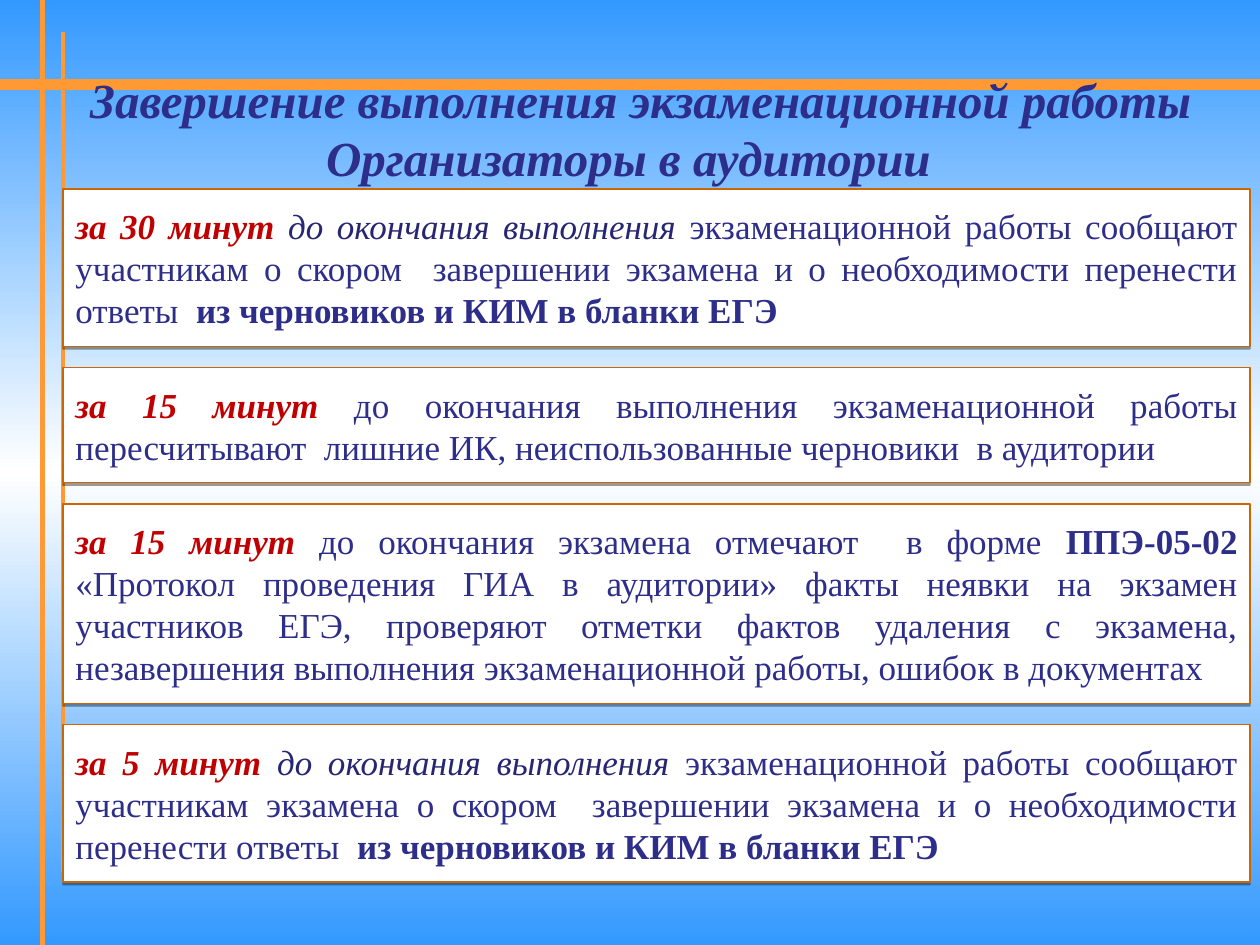
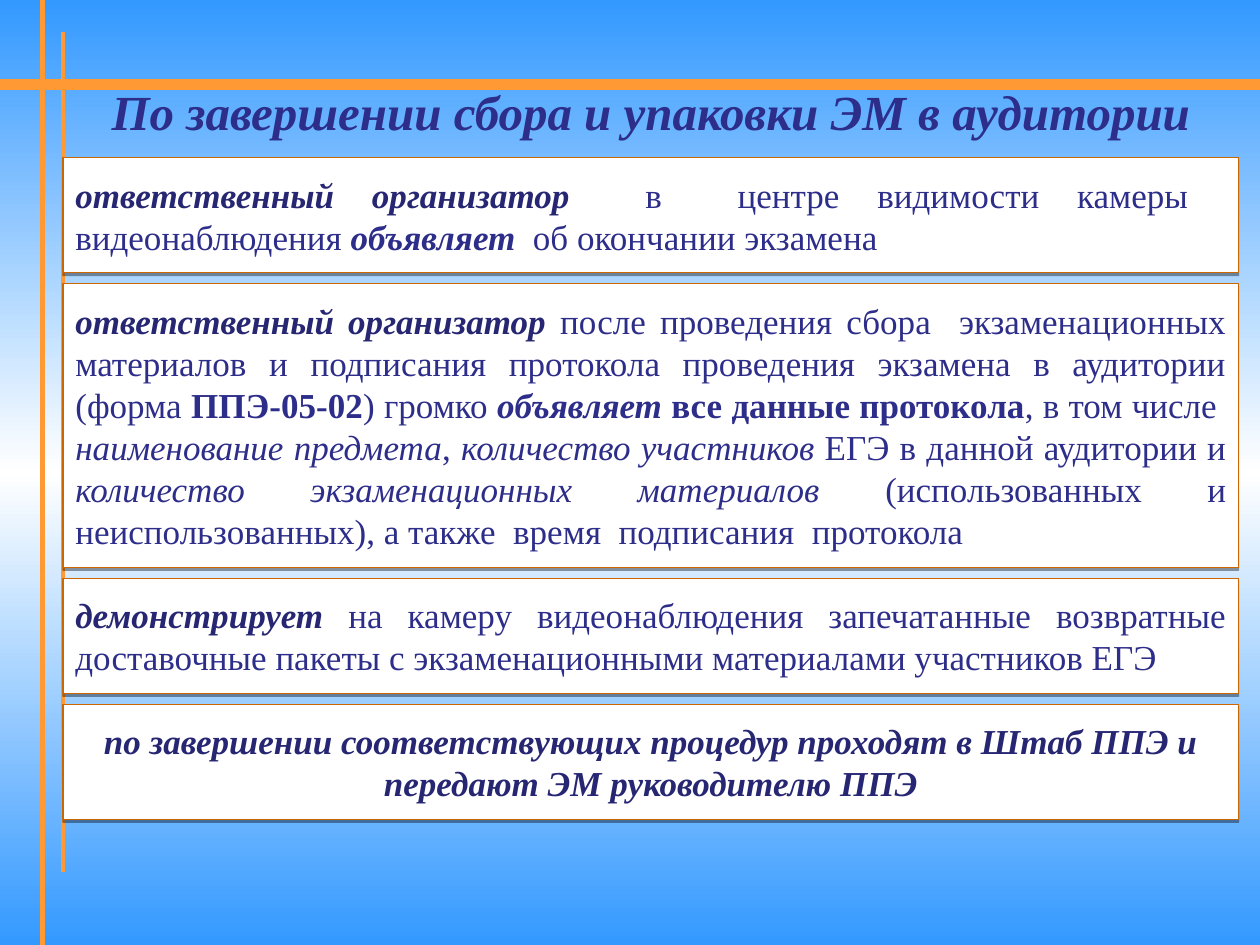
from copy import deepcopy

from lxml import etree
from pptx import Presentation
from pptx.dml.color import RGBColor
from pptx.enum import shapes, text
from pptx.oxml.ns import qn
from pptx.util import Cm, Pt

COLORS = {
    "sky": "3399FF",
    "white": "FFFFFF",
    "orange": "FF9933",
    "frame": "CC6600",
    "blue": "2D2D8A",
    "navy": "262673",
    "red": "C00000",
    "shadow": "000000",
}
FONT = "Times New Roman"
SLIDE_W, SLIDE_H = 25.4, 19.05
LEFT = 1.27
LINE_HEIGHT, PADDING = 0.85, 0.31

# Run styles: colour, bold, italic
STYLES = {
    "time": ("red", True, True),
    "lead": ("navy", True, True),
    "soft": ("navy", False, True),
    "plain": ("blue", False, False),
    "bold": ("blue", True, False),
    "italic": ("blue", False, True),
    "strong": ("blue", True, True),
}

# Each notice: number of text lines, then its runs
BEFORE_END = [
    (3, [("time", "за 30 минут "),
         ("soft", "до окончания выполнения "),
         ("plain", "экзаменационной работы сообщают участникам о скором  "
                   "завершении экзамена и о необходимости перенести ответы  "),
         ("bold", "из черновиков и КИМ в бланки ЕГЭ")]),
    (2, [("time", "за 15 минут "),
         ("plain", "до окончания выполнения экзаменационной работы пересчитывают  "
                   "лишние ИК, неиспользованные черновики  в аудитории")]),
    (4, [("time", "за 15 минут "),
         ("plain", "до окончания экзамена отмечают  в форме "),
         ("bold", "ППЭ-05-02 "),
         ("plain", "«Протокол проведения ГИА в аудитории» факты неявки на экзамен "
                   "участников ЕГЭ, проверяют отметки фактов удаления с экзамена, "
                   "незавершения выполнения экзаменационной работы, "
                   "ошибок в документах")]),
    (3, [("time", "за 5 минут "),
         ("soft", "до окончания выполнения "),
         ("plain", "экзаменационной работы сообщают участникам экзамена о скором  "
                   "завершении экзамена и о необходимости перенести ответы  "),
         ("bold", "из черновиков и КИМ в бланки ЕГЭ")]),
]
AFTER_PACKING = [
    (2, [("lead", "ответственный организатор  "),
         ("plain", "в  центре видимости камеры  видеонаблюдения "),
         ("strong", "объявляет"),
         ("plain", "  об окончании экзамена")]),
    (6, [("lead", "ответственный организатор "),
         ("plain", "после проведения сбора  экзаменационных материалов и подписания "
                   "протокола проведения экзамена в аудитории (форма "),
         ("bold", "ППЭ-05-02"),
         ("plain", ") громко "),
         ("strong", "объявляет "),
         ("bold", "все данные протокола"),
         ("plain", ", в том числе  "),
         ("italic", "наименование предмета"),
         ("plain", ", "),
         ("italic", "количество участников"),
         ("plain", " ЕГЭ в данной аудитории и "),
         ("italic", "количество экзаменационных материалов"),
         ("plain", " (использованных и неиспользованных), а также  время  "
                   "подписания  протокола ")]),
    (2, [("lead", "демонстрирует "),
         ("plain", "на камеру видеонаблюдения запечатанные возвратные доставочные "
                   "пакеты с экзаменационными материалами участников ЕГЭ")]),
    (2, [("lead", "по завершении соответствующих процедур проходят в Штаб ППЭ "
                  "и передают ЭМ руководителю ППЭ")]),
]


def rgb(name):
    return RGBColor.from_string(COLORS[name])


def add_run(paragraph, words, style, size):
    color, bold, italic = STYLES[style]
    run = paragraph.add_run()
    run.text = words
    font = run.font
    font.name, font.size, font.bold, font.italic = FONT, Pt(size), bold, italic
    font.color.rgb = rgb(color)


def paint_background(master):
    fill = master.background.fill
    fill.gradient()
    stops = master.element.find(".//" + qn("p:bg")).find(".//" + qn("a:gsLst"))
    stops.insert(1, deepcopy(stops[0]))
    for stop, position, color in zip(fill.gradient_stops, (0, 0.5, 1),
                                     ("sky", "white", "sky")):
        stop.position = position
        stop.color.rgb = rgb(color)
    fill.gradient_angle = 270


def add_grid_lines(slide):
    for x1, y1, x2, y2, weight in (
        (0, 1.7, SLIDE_W, 1.7, 6),
        (0.85, 0, 0.85, SLIDE_H, 3),
        (LEFT, 0.64, LEFT, 17.58, 2.25),
    ):
        rule = slide.shapes.add_connector(
            shapes.MSO_CONNECTOR.STRAIGHT, Cm(x1), Cm(y1), Cm(x2), Cm(y2))
        rule.line.color.rgb = rgb("orange")
        rule.line.width = Pt(weight)
        etree.SubElement(rule.element.spPr, qn("a:effectLst"))


def add_title(slide, box, lines, anchor):
    frame = slide.shapes.add_textbox(*map(Cm, box)).text_frame
    frame.word_wrap = True
    frame.vertical_anchor = anchor
    for index, words in enumerate(lines):
        paragraph = frame.add_paragraph() if index else frame.paragraphs[0]
        paragraph.alignment = text.PP_ALIGN.CENTER
        add_run(paragraph, words, "strong", 28)


def add_drop_shadow(shape):
    shape.shadow.inherit = False
    effects = shape.element.spPr.find(qn("a:effectLst"))
    drop = etree.SubElement(effects, qn("a:outerShdw"), blurRad="0",
                            dist=str(Pt(1.6)), dir="5400000", rotWithShape="0")
    color = etree.SubElement(drop, qn("a:srgbClr"), val=COLORS["shadow"])
    etree.SubElement(color, qn("a:alpha"), val="38000")


def add_notice(slide, box, runs):
    notice = slide.shapes.add_shape(shapes.MSO_SHAPE.RECTANGLE, *map(Cm, box))
    notice.fill.solid()
    notice.fill.fore_color.rgb = rgb("white")
    notice.line.color.rgb = rgb("frame")
    notice.line.width = Pt(0.75)
    add_drop_shadow(notice)

    frame = notice.text_frame
    frame.word_wrap = True
    frame.auto_size = text.MSO_AUTO_SIZE.SHAPE_TO_FIT_TEXT
    frame.vertical_anchor = text.MSO_ANCHOR.MIDDLE
    frame.margin_left = frame.margin_right = Cm(0.25)
    frame.margin_top = frame.margin_bottom = Cm(PADDING)
    paragraph = frame.paragraphs[0]
    # A notice made of a single phrase is centred
    paragraph.alignment = (text.PP_ALIGN.JUSTIFY if len(runs) > 1
                           else text.PP_ALIGN.CENTER)
    for style, words in runs:
        add_run(paragraph, words, style, 20)


def add_notice_stack(slide, top, width, gap, notices):
    for line_count, runs in notices:
        height = line_count * LINE_HEIGHT + 2 * PADDING
        add_notice(slide, (LEFT, top, width, height), runs)
        top += height + gap


def add_notice_slide(prs, title, stack):
    slide = prs.slides.add_slide(prs.slide_layouts[6])
    add_grid_lines(slide)
    add_title(slide, *title)
    add_notice_stack(slide, *stack)


def main():
    prs = Presentation()
    prs.slide_width, prs.slide_height = Cm(SLIDE_W), Cm(SLIDE_H)
    paint_background(prs.slide_master)

    # Countdown to the end of the exam
    add_notice_slide(
        prs,
        ((0.43, 1.27, 24.97, 2.11),
         ["Завершение выполнения экзаменационной работы",
          "Организаторы в аудитории  "],
         text.MSO_ANCHOR.TOP),
        (3.81, 23.93, 0.43, BEFORE_END))

    # Steps after the materials are packed
    add_notice_slide(
        prs,
        ((LEFT, 1.7, 23.7, 1.07),
         ["По завершении сбора и упаковки ЭМ в аудитории"],
         text.MSO_ANCHOR.MIDDLE),
        (3.18, 23.7, 0.22, AFTER_PACKING))

    prs.save("out.pptx")


if __name__ == "__main__":
    main()
